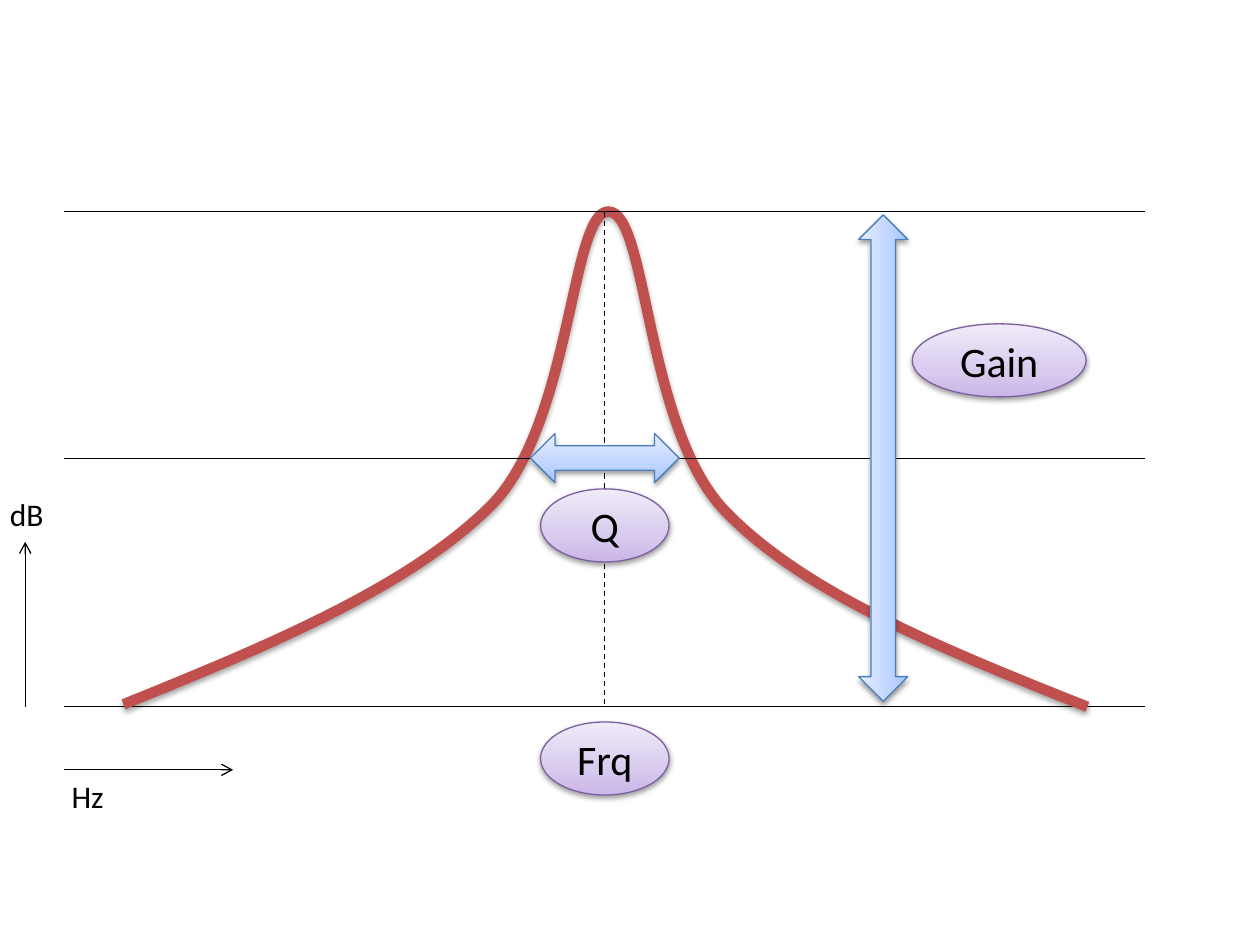
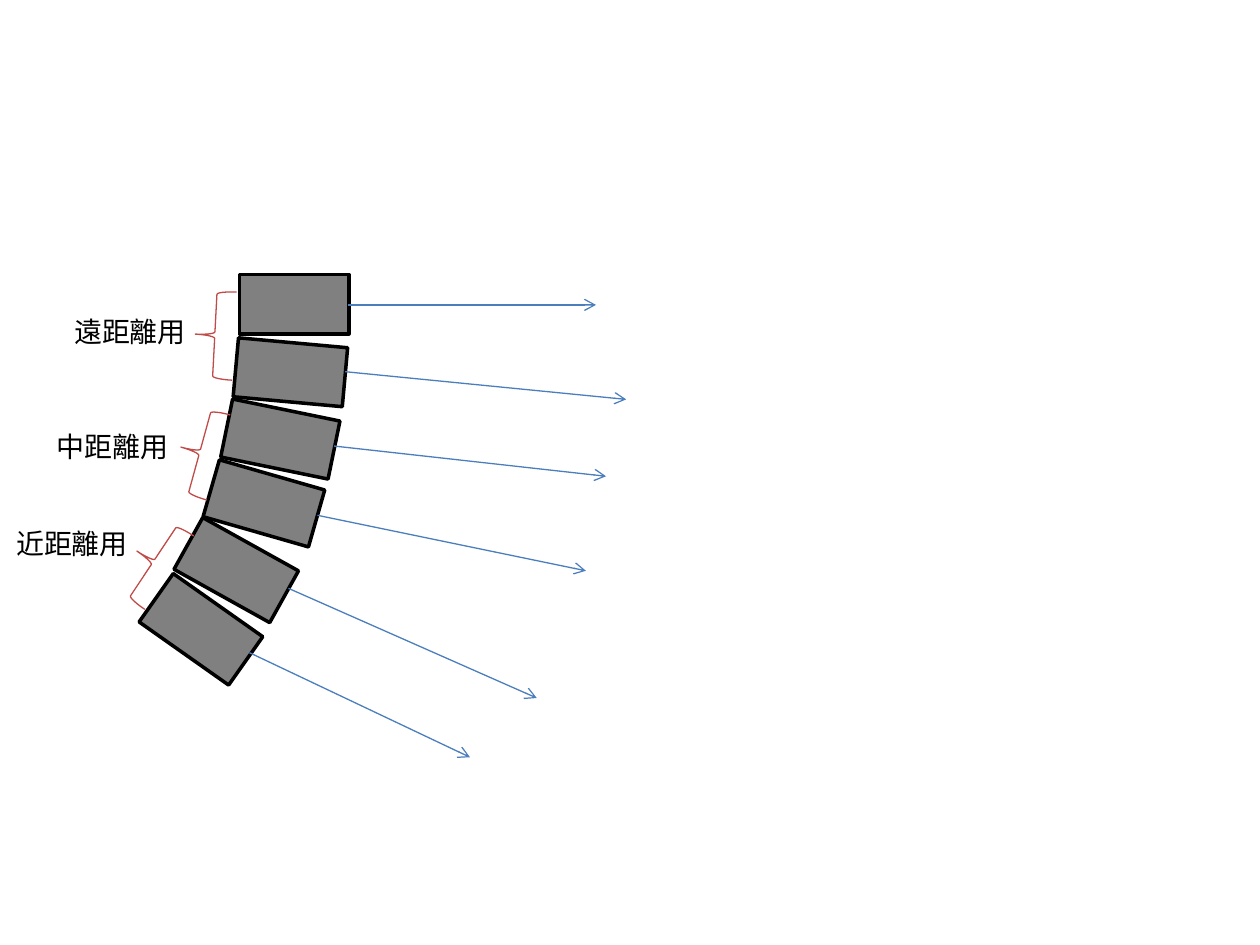
import lxml.etree
import pptx
import pptx.dml.color
import pptx.enum.dml
import pptx.enum.shapes
import pptx.enum.text
import pptx.oxml
import pptx.oxml.ns
import pptx.util

RGB = pptx.dml.color.RGBColor
KIND = pptx.enum.shapes.MSO_SHAPE
DASH = pptx.enum.dml.MSO_LINE.DASH
ALIGN = pptx.enum.text.PP_ALIGN
MIDDLE = pptx.enum.text.MSO_ANCHOR.MIDDLE
qn = pptx.oxml.ns.qn

BLACK = RGB(0x00, 0x00, 0x00)
GREY = RGB(0x80, 0x80, 0x80)
RED = RGB(0xC0, 0x50, 0x4D)
BRICK = RGB(0xBF, 0x4C, 0x48)
BLUE = RGB(0x4B, 0x7E, 0xBC)
PLUM = RGB(0x7D, 0x60, 0xA0)
SKY = (RGB(0xA4, 0xC4, 0xFF), RGB(0xBF, 0xD4, 0xFF), RGB(0xE6, 0xEE, 0xFF))
LILAC = (RGB(0xC9, 0xB5, 0xE8), RGB(0xD8, 0xCB, 0xEE), RGB(0xF0, 0xEA, 0xF9))
STOPS = (0, 35, 100)
FONT = "Calibri"

WIDE, HIGH = pptx.util.Inches(10), pptx.util.Inches(7.5)
COLS, ROWS = 100, 75
THIN = 0.75

LEFT, RIGHT = 5.1, 90.9
TOP, MID, BASE = 16.8, 36.4, 56.1
PEAK = 48
CURVE = [(9.8, 55.9),
         (21.2, 51.3), (32.5, 46.6), (39, 40.1),
         (45.4, 33.6), (45.3, 16.7), (48.3, 16.8),
         (51.4, 16.8), (51.2, 33.9), (57.5, 40.5),
         (63.8, 47.1), (75, 51.6), (86.3, 56.1)]
KNOBS = [("Q", 42.9, 38.8, 10.2), ("Frq", 42.9, 57.3, 10.2), ("Gain", 72.4, 25.7, 13.8)]

BOXES = [(19, 21.8, 0), (18.7, 27.2, 5.2), (17.9, 32.5, 11.6),
         (16.6, 37.6, 16), (14.4, 42.9, 29.1), (11.6, 47.6, 35.2)]
RAYS = [((27.6, 24.2), (47.3, 24.2)), ((27.4, 29.5), (49.7, 31.7)),
        ((26.5, 35.4), (48.1, 37.8)), ((25.2, 40.9), (46.5, 45.3)),
        ((22.9, 46.7), (42.6, 55.4)), ((19.8, 51.8), (37.3, 60.1))]
ZONES = [("近距離用", (0.3, 41.3), (10.6, 41.1), 33.7),
         ("中距離用", (3.5, 33.6), (14.3, 32.4), 15.4),
         ("遠距離用", (4.9, 24.5), (15.5, 23.1), 3)]


def col(x):
    return round(x * WIDE / COLS)


def row(y):
    return round(y * HIGH / ROWS)


def put(item, form):
    for name, value in form.items():
        setattr(item, name, value)


def node(parent, tag, **attrs):
    return lxml.etree.SubElement(parent, qn(tag), {k: str(v) for k, v in attrs.items()})


def stroke(line, hue, width=THIN):
    line.color.rgb = hue
    line.width = pptx.util.Pt(width)


def shade(shape, force, gap):
    shape.shadow.inherit = False
    glow = node(shape.element.spPr.find(qn("a:effectLst")), "a:outerShdw",
                blurRad=40000, dist=pptx.util.Pt(gap), dir=5400000, rotWithShape=0)
    node(node(glow, "a:srgbClr", val=BLACK), "a:alpha", val=force * 1000)


def blend(shape, hues):
    shape.fill.gradient()
    shape.fill.gradient_angle = 90
    stops = shape.element.spPr.find(qn("a:gradFill")).find(qn("a:gsLst"))
    stops.clear()
    for spot, hue in zip(STOPS, hues):
        node(node(stops, "a:gs", pos=spot * 1000), "a:srgbClr", val=hue)


def rule(slide, start, end, hue=BLACK, dash=None, head=False):
    line = slide.shapes.add_connector(
        pptx.enum.shapes.MSO_CONNECTOR.STRAIGHT,
        col(start[0]), row(start[1]), col(end[0]), row(end[1]))
    stroke(line.line, hue)
    if dash:
        line.line.dash_style = dash
    if head:
        node(line.element.spPr.find(qn("a:ln")), "a:tailEnd", type="arrow")
    node(line.element.spPr, "a:effectLst")


def form(slide, kind, x, y, w, h, hue, width=THIN, turn=0):
    shape = slide.shapes.add_shape(kind, col(x), row(y), col(w), row(h))
    shape.rotation = turn
    shape.shadow.inherit = False
    shape.fill.background()
    stroke(shape.line, hue, width)
    return shape


def write(shape, text, size, align=ALIGN.LEFT, **frame):
    put(shape.text_frame, frame)
    part = shape.text_frame.paragraphs[0]
    part.alignment = align
    run = part.add_run()
    run.text = text
    put(run.font, {"name": FONT, "size": pptx.util.Pt(size)})
    run.font.color.rgb = BLACK


def label(slide, text, x, y, w, h, size, wrap):
    box = slide.shapes.add_textbox(col(x), row(y), col(w), row(h))
    write(box, text, size, word_wrap=wrap)


def arrow(slide, x, y, w, turn=0):
    shape = form(slide, KIND.LEFT_RIGHT_ARROW, x, y, w, 3.9, BLUE, turn=turn)
    blend(shape, SKY)
    shade(shape, 38, 1.6)


def knob(slide, text, x, y, w):
    shape = form(slide, KIND.OVAL, x, y, w, 5.8, PLUM)
    blend(shape, LILAC)
    shade(shape, 38, 1.6)
    write(shape, text, 24, ALIGN.CENTER, vertical_anchor=MIDDLE, word_wrap=False)


def curve(slide, points):
    spots = [(col(x), row(y)) for x, y in points]
    pen = slide.shapes.build_freeform(*spots[0])
    pen.add_line_segments(spots[1:], close=False)
    shape = pen.convert_to_shape()
    track = next(shape.element.iter(qn("a:path")))
    legs = track.findall(qn("a:lnTo"))
    for i in range(0, len(legs), 3):
        bend = node(track, "a:cubicBezTo")
        for leg in legs[i:i + 3]:
            bend.append(leg[0])
            track.remove(leg)
    shape.fill.background()
    stroke(shape.line, RED, 6)
    shade(shape, 35, 1.8)


def draw_peak(slide):
    rule(slide, (LEFT, BASE), (RIGHT, BASE))
    curve(slide, CURVE)
    for y in (TOP, MID):
        rule(slide, (LEFT, y), (RIGHT, y))
    rule(slide, (PEAK, TOP), (PEAK, BASE), dash=DASH)
    arrow(slide, 42.1, 34.4, 11.8)
    arrow(slide, 50.8, 34.4, 38.6, 270)
    rule(slide, (LEFT, 61.1), (18.5, 61.1), head=True)
    label(slide, "Hz", 4.7, 61.2, 7.1, 4, 18, True)
    rule(slide, (2, BASE), (2, 43), head=True)
    label(slide, "dB", -0.2, 38.8, 7.1, 4, 18, True)
    for item in KNOBS:
        knob(slide, *item)


def draw_array(slide):
    for x, y, turn in BOXES:
        box = form(slide, KIND.RECTANGLE, x, y, 8.7, 4.7, BLACK, 2, turn)
        box.fill.solid()
        box.fill.fore_color.rgb = GREY
    for start, end in RAYS:
        rule(slide, start, end, BLUE, head=True)
    for text, spot, brace, turn in ZONES:
        label(slide, text, *spot, 11, 3.7, 16, False)
        form(slide, KIND.LEFT_BRACE, *brace, 3.1, 7, BRICK, turn=turn)


def main():
    deck = pptx.Presentation()
    put(deck, {"slide_width": WIDE, "slide_height": HIGH})
    for draw in (draw_peak, draw_array):
        draw(deck.slides.add_slide(deck.slide_layouts[6]))
    deck.save("out.pptx")


if __name__ == "__main__":
    main()
